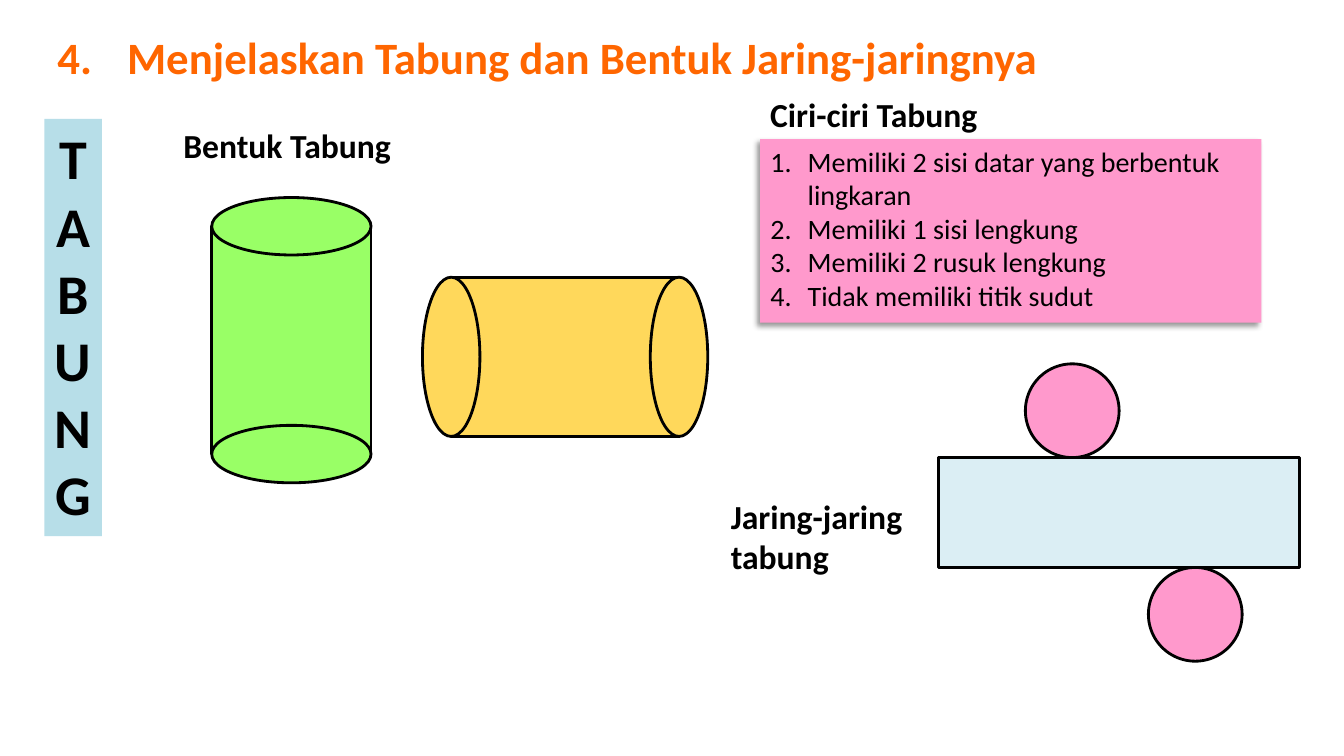
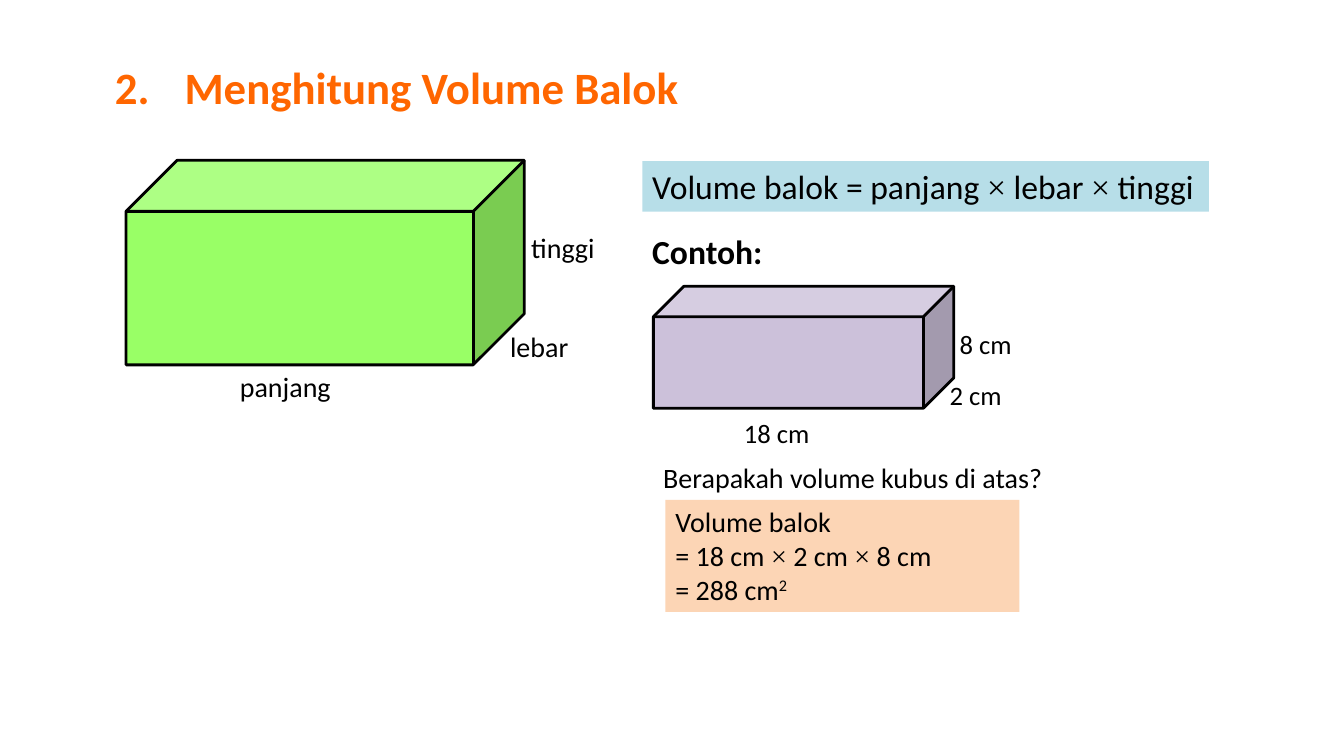
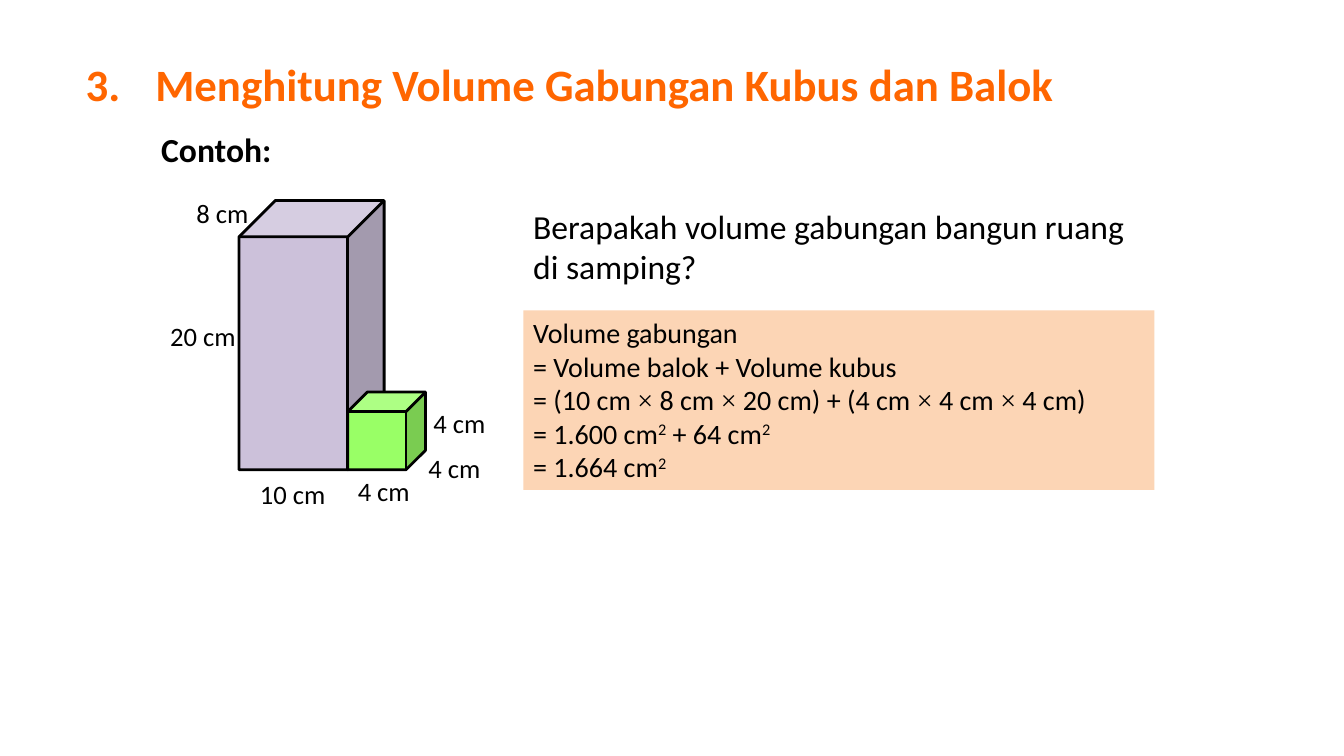
from itertools import groupby

from lxml import etree
from pptx import Presentation
from pptx.dml.color import RGBColor
from pptx.enum import shapes, text
from pptx.oxml import ns
from pptx.util import Inches, Pt

COLORS = {
    "title": "FF6600",
    "ink": "000000",
    "sky": "B7DEE8",
    "pale": "DBEEF4",
    "pink": "FF99CC",
    "green": "99FF66",
    "yellow": "FFD85B",
    "lilac": "CCC1DA",
    "peach": "FCD5B5",
}
FONT = "Calibri"
SYMBOL_FONT = "Times New Roman"
TITLE_TAB = 0.69
LIST_INDENT = 0.37
TITLE_ONLY, TITLE_AND_BODY = 5, 1


def rgb(name):
    return RGBColor.from_string(COLORS[name])


def inches(*lengths):
    return [Inches(length) for length in lengths]


def paint(shape, fill):
    shape.fill.solid()
    shape.fill.fore_color.rgb = rgb(fill)


def place(shape, box):
    shape.left, shape.top, shape.width, shape.height = inches(*box)


def add_child(parent, tag, **attributes):
    child = etree.SubElement(parent, ns.qn(tag))
    for key, value in attributes.items():
        child.set(key, str(value))
    return child


def add_runs(paragraph, line, size, bold=False, color="ink"):
    """Give × its own font and set ² as a raised 2."""
    for symbol, letters in groupby(line, lambda c: c if c in "×²" else ""):
        run = paragraph.add_run()
        run.text = "".join(letters).replace("²", "2")
        run.font.name = SYMBOL_FONT if symbol == "×" else FONT
        run.font.size = Pt(size)
        run.font.bold = bold
        run.font.color.rgb = rgb(color)
        if symbol == "²":
            run._r.get_or_add_rPr().set("baseline", "30000")


def write(frame, lines, size, bold=False, color="ink", wrap=True,
          align=text.PP_ALIGN.LEFT):
    """Fill a text frame with one paragraph a line, and return the paragraphs."""
    frame.word_wrap = wrap
    frame.auto_size = text.MSO_AUTO_SIZE.NONE
    frame.vertical_anchor = text.MSO_ANCHOR.TOP
    for extra in lines[1:]:
        frame.add_paragraph()
    for paragraph, line in zip(frame.paragraphs, lines):
        paragraph.alignment = align
        paragraph.space_before = Pt(0)
        add_runs(paragraph, line, size, bold, color)
    return frame.paragraphs


def add_text(slide, box, lines, size, fill=None, **style):
    area = slide.shapes.add_textbox(*inches(*box))
    if fill:
        paint(area, fill)
    write(area.text_frame, lines, size, **style)


def add_heading(slide, left, top, width, heading, height=0.5, wrap=False):
    add_text(slide, (left, top, width, height), [heading], 24, bold=True, wrap=wrap)


def add_solid(slide, kind, box, fill):
    """Add a filled shape with the black outline that all the figures share."""
    solid = slide.shapes.add_shape(kind, *inches(*box))
    solid.shadow.inherit = False
    paint(solid, fill)
    solid.line.color.rgb = rgb("ink")
    solid.line.width = Pt(2)


def new_slide(deck, layout, left, top, number, topic):
    slide = deck.slides.add_slide(deck.slide_layouts[layout])
    title = slide.shapes.title
    place(title, (left, top, 11, 0.64))
    heading, = write(title.text_frame, [f"{number}.\t{topic}"], 32, True, "title")
    tabs = add_child(heading._p.get_or_add_pPr(), "a:tabLst")
    add_child(tabs, "a:tab", pos=Inches(TITLE_TAB), algn="l")
    return slide


def add_cylinder(slide, box, cap, fill):
    """Draw a cylinder along the longer side of its box; cap is the ellipse depth."""
    left, top, width, height = box
    if width > height:
        body = (left + cap / 2, top, width - cap, height)
        ends = [(left + shift, top, cap, height) for shift in (0, width - cap)]
    else:
        body = (left, top + cap / 2, width, height - cap)
        ends = [(left, top + shift, width, cap) for shift in (0, height - cap)]
    add_solid(slide, shapes.MSO_SHAPE.RECTANGLE, body, fill)
    for end in ends:
        add_solid(slide, shapes.MSO_SHAPE.OVAL, end, fill)


def add_cylinder_net(slide, left, top):
    circle, width, height = 0.93, 3.58, 1.09
    bases = ((0.86, 0), (2.08, circle + height))
    for dx, dy in bases:
        add_solid(slide, shapes.MSO_SHAPE.OVAL,
                  (left + dx, top + dy, circle, circle), "pink")
    add_solid(slide, shapes.MSO_SHAPE.RECTANGLE,
              (left, top + circle, width, height), "pale")


def add_numbered_list(slide, box, items, fill):
    body = slide.placeholders[1]
    place(body, box)
    paint(body, fill)
    body.shadow.inherit = False
    effects = body._element.spPr.find(ns.qn("a:effectLst"))
    shadow = add_child(effects, "a:outerShdw", blurRad=Pt(4), dist=Pt(3),
                       dir=135 * 60000, algn="tr", rotWithShape=0)
    tint = add_child(shadow, "a:srgbClr", val=COLORS["ink"])
    add_child(tint, "a:alpha", val=40000)
    for paragraph in write(body.text_frame, items, 20):
        properties = paragraph._p.get_or_add_pPr()
        properties.set("marL", str(Inches(LIST_INDENT)))
        properties.set("indent", str(-Inches(LIST_INDENT)))
        add_child(properties, "a:buFont", typeface=FONT)
        add_child(properties, "a:buAutoNum", type="arabicPeriod")


def add_block(slide, box, fill, labels, size=19):
    """Draw a box solid; each label is (text, dx, dy, width) from its corner."""
    add_solid(slide, shapes.MSO_SHAPE.CUBE, box, fill)
    for label, dx, dy, width in labels:
        add_text(slide, (box[0] + dx, box[1] + dy, width, 0.43), [label], size,
                 wrap=False)


def cylinder_slide(deck):
    slide = new_slide(deck, TITLE_AND_BODY, 0.47, 0.24, 4,
                      "Menjelaskan Tabung dan Bentuk Jaring-jaringnya")
    add_text(slide, (0.44, 1.18, 0.57, 4.14), list("TABUNG"), 40, fill="sky",
             bold=True, wrap=False, align=text.PP_ALIGN.CENTER)

    add_heading(slide, 1.72, 1.19, 2.28, "Bentuk Tabung")
    add_cylinder(slide, (2.1, 1.96, 1.58, 2.83), 0.57, "green")
    add_cylinder(slide, (4.19, 2.75, 2.83, 1.58), 0.57, "yellow")

    add_heading(slide, 7.54, 0.88, 2.28, "Ciri-ciri Tabung")
    add_numbered_list(slide, (7.54, 1.38, 4.97, 1.82), [
        "Memiliki 2 sisi datar yang berbentuk lingkaran",
        "Memiliki 1 sisi lengkung",
        "Memiliki 2 rusuk lengkung",
        "Tidak memiliki titik sudut",
    ], "pink")

    add_heading(slide, 7.15, 4.87, 2.47, "Jaring-jaring tabung", 0.94, wrap=True)
    add_cylinder_net(slide, 9.31, 3.61)


def cuboid_slide(deck):
    slide = new_slide(deck, TITLE_ONLY, 1.04, 0.54, 2, "Menghitung Volume Balok")
    add_block(slide, (1.25, 1.59, 3.95, 2.03), "green", [
        ("panjang", 1.03, 2.03, 1.11),
        ("lebar", 3.71, 1.63, 0.79),
        ("tinggi", 3.92, 0.65, 0.84),
    ], size=20)

    add_text(slide, (6.37, 1.6, 5.62, 0.5),
             ["Volume balok = panjang × lebar × tinggi"], 24, fill="sky", wrap=False)
    add_heading(slide, 6.37, 2.24, 1.31, "Contoh:")
    add_block(slide, (6.48, 2.84, 2.98, 1.21), "lilac", [
        ("18 cm", 0.8, 1.25, 0.86),
        ("2 cm", 2.84, 0.87, 0.72),
        ("8 cm", 2.94, 0.36, 0.72),
    ])
    add_text(slide, (6.48, 4.52, 5.8, 0.44), ["Berapakah volume kubus di atas?"], 20)
    add_text(slide, (6.6, 4.96, 3.51, 1.11), [
        "Volume balok",
        "= 18 cm × 2 cm × 8 cm",
        "= 288 cm²",
    ], 20, fill="peach")


def combined_slide(deck):
    slide = new_slide(deck, TITLE_ONLY, 0.75, 0.51, 3,
                      "Menghitung Volume Gabungan Kubus dan Balok")
    add_heading(slide, 1.5, 1.23, 1.31, "Contoh:")
    add_block(slide, (2.37, 1.99, 1.44, 2.67), "lilac", [
        ("10 cm", 0.11, 2.7, 0.86),
        ("20 cm", -0.78, 1.13, 0.86),
        ("8 cm", -0.52, -0.09, 0.72),
    ])
    add_block(slide, (3.45, 3.89, 0.77, 0.77), "green", [
        ("4 cm", 0, 0.77, 0.72),
        ("4 cm", 0.7, 0.54, 0.72),
        ("4 cm", 0.75, 0.1, 0.72),
    ])

    add_text(slide, (5.19, 1.99, 6.26, 0.94),
             ["Berapakah volume gabungan bangun ruang di samping?"], 24)
    add_text(slide, (5.19, 3.08, 6.26, 1.78), [
        "Volume gabungan",
        "= Volume balok + Volume kubus",
        "= (10 cm × 8 cm × 20 cm) + (4 cm × 4 cm × 4 cm)",
        "= 1.600 cm² + 64 cm²",
        "= 1.664 cm²",
    ], 20, fill="peach")


def main():
    deck = Presentation()
    deck.slide_width, deck.slide_height = inches(13.33, 7.5)
    cylinder_slide(deck)
    cuboid_slide(deck)
    combined_slide(deck)
    deck.save("out.pptx")


if __name__ == "__main__":
    main()
